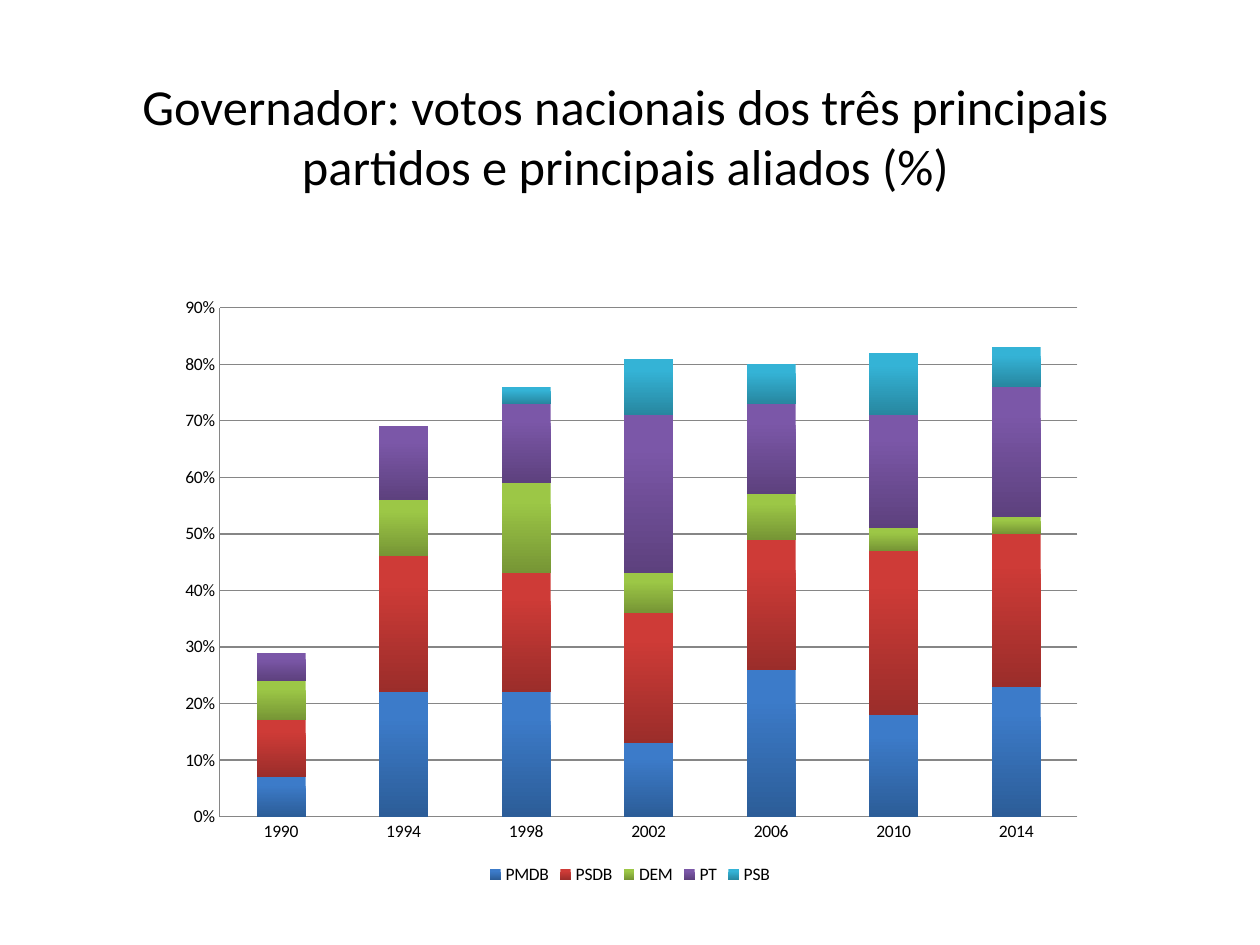
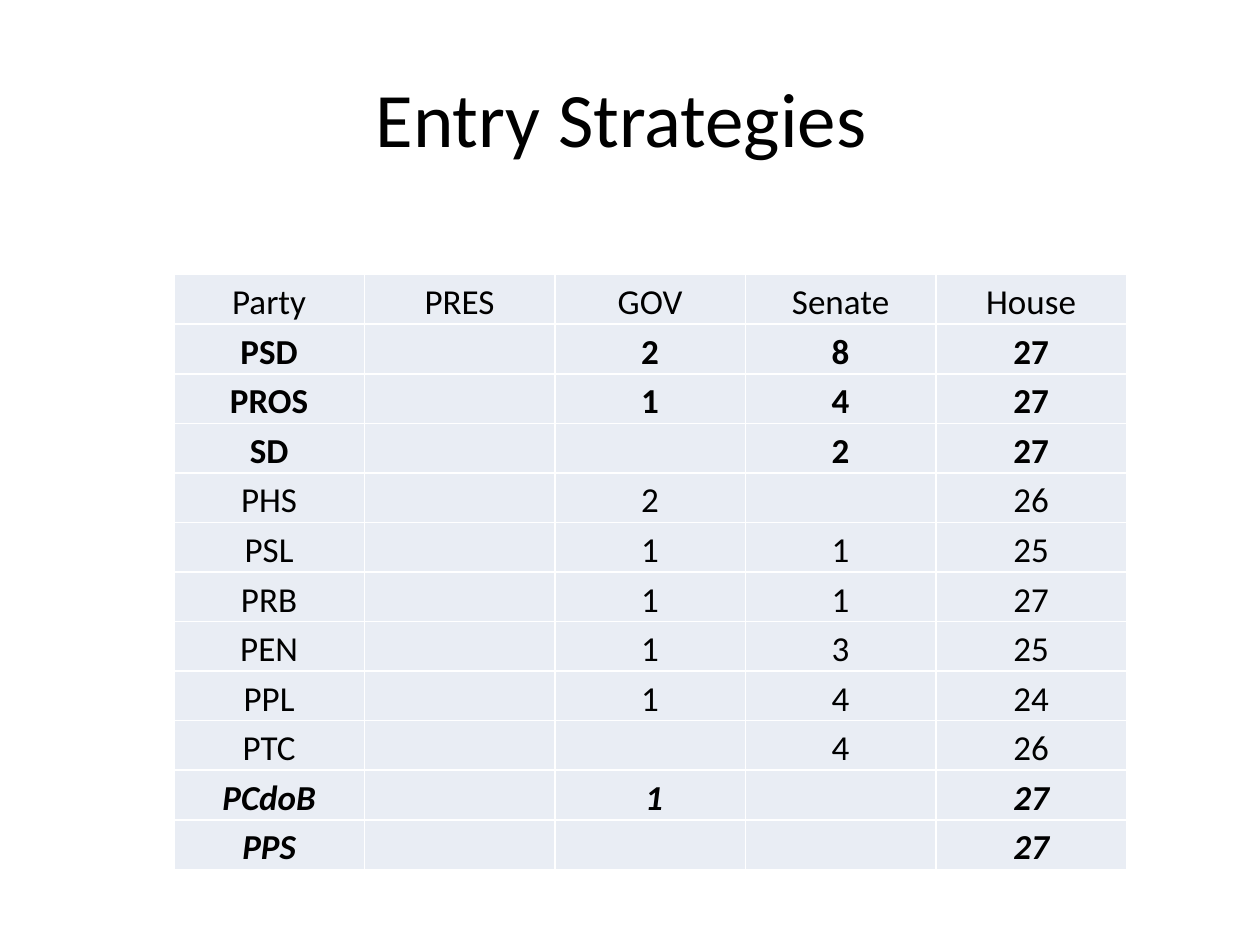
from lxml.etree import SubElement
from pptx import Presentation
from pptx.chart.data import CategoryChartData
from pptx.dml.color import RGBColor
from pptx.enum.chart import XL_CHART_TYPE as CHART, XL_LEGEND_POSITION as LEGEND, XL_TICK_MARK as TICK
from pptx.enum.text import MSO_ANCHOR as ANCHOR, MSO_AUTO_SIZE as AUTOSIZE, PP_ALIGN as ALIGN
from pptx.oxml import parse_xml
from pptx.oxml.ns import nsdecls, qn
from pptx.util import Inches, Pt

FONT, INK, GRID, CELL, RULE = "Calibri", "000000", "868686", "E9EDF4", "FFFFFF"
YEARS = ["1990", "1994", "1998", "2002", "2006", "2010", "2014"]
PARTIES = [
    ("PMDB", "3C7BC9", "2C5D98", [0.07, 0.22, 0.22, 0.13, 0.26, 0.18, 0.23]),
    ("PSDB", "CE3B37", "9B2D2A", [0.1, 0.24, 0.21, 0.23, 0.23, 0.29, 0.27]),
    ("DEM", "9CC746", "769535", [0.07, 0.1, 0.16, 0.07, 0.08, 0.04, 0.03]),
    ("PT", "7B57A8", "5D417E", [0.05, 0.13, 0.14, 0.28, 0.16, 0.2, 0.23]),
    ("PSB", "34B3D6", "2787A0", [0, 0, 0.03, 0.1, 0.07, 0.11, 0.07]),
]
PLAIN, BOLD, BOLD_ITALIC = {}, {"bold": True}, {"bold": True, "italic": True}
ENTRIES = [
    (PLAIN, ["Party", "PRES", "GOV", "Senate", "House"]),
    (BOLD, ["PSD", "", "2", "8", "27"]),
    (BOLD, ["PROS", "", "1", "4", "27"]),
    (BOLD, ["SD", "", "", "2", "27"]),
    (PLAIN, ["PHS", "", "2", "", "26"]),
    (PLAIN, ["PSL", "", "1", "1", "25"]),
    (PLAIN, ["PRB", "", "1", "1", "27"]),
    (PLAIN, ["PEN", "", "1", "3", "25"]),
    (PLAIN, ["PPL", "", "1", "4", "24"]),
    (PLAIN, ["PTC", "", "", "4", "26"]),
    (BOLD_ITALIC, ["PCdoB", "", " 1", "", "27"]),
    (BOLD_ITALIC, ["PPS", "", "", "", "27"]),
]


def color(value):
    """Turn a hex string into a colour."""
    return RGBColor.from_string(value)


def assign(target, values):
    """Set each attribute named in a dict."""
    for name, value in values.items():
        setattr(target, name, value)


def style_font(font, size, **values):
    """Apply the shared typeface and ink at a size."""
    assign(font, {"name": FONT, "size": Pt(size), **values})
    font.color.rgb = color(INK)


def write(tf, text, size, **values):
    """Write one centred paragraph, with newlines as line breaks."""
    p = tf.paragraphs[0]
    p.text = text
    p.alignment = ALIGN.CENTER
    for r in p.runs:
        style_font(r.font, size, **values)


def add_titled_slide(prs, title, size, box):
    """Add a title-only slide with its title placed in the box."""
    s = prs.slides.add_slide(prs.slide_layouts[5])
    sp = s.shapes.title
    assign(sp, dict(zip(("left", "top", "width", "height"), map(Inches, box))))
    assign(sp.text_frame, {"word_wrap": True, "auto_size": AUTOSIZE.NONE,
                           "vertical_anchor": ANCHOR.MIDDLE})
    write(sp.text_frame, title, size)
    return s


def place_plot(chart, **fractions):
    """Fix the inner plot area as fractions of the chart."""
    area = chart.element.xpath("c:chart/c:plotArea")[0]
    for old in area.findall(qn("c:layout")):
        area.remove(old)
    layout = parse_xml(f"<c:layout {nsdecls('c')}/>")
    manual = SubElement(layout, qn("c:manualLayout"))
    settings = {"layoutTarget": "inner", "xMode": "edge", "yMode": "edge", **fractions}
    for name, value in settings.items():
        SubElement(manual, qn(f"c:{name}")).set("val", str(value))
    area.insert(0, layout)


def add_vote_chart(s, box):
    """Draw the stacked vote shares by year in the box."""
    data = CategoryChartData(number_format="0%")
    data.categories = YEARS
    for name, _, _, shares in PARTIES:
        data.add_series(name, shares)
    chart = s.shapes.add_chart(CHART.COLUMN_STACKED, *map(Inches, box), data).chart
    style_font(chart.font, 10)
    assign(chart, {"has_title": False, "has_legend": True})
    assign(chart.legend, {"position": LEGEND.BOTTOM, "include_in_layout": False})
    plot = chart.plots[0]
    assign(plot, {"gap_width": 150, "overlap": 100, "vary_by_categories": False})
    for series, (_, light, dark, _) in zip(plot.series, PARTIES):
        fill = series.format.fill
        fill.gradient()
        fill.gradient_angle = 270
        for stop, shade, position in zip(fill.gradient_stops, (light, dark), (0.2, 1)):
            stop.color.rgb = color(shade)
            stop.position = position
    shares_axis = chart.value_axis
    assign(shares_axis, {"minimum_scale": 0, "maximum_scale": 0.9, "major_unit": 0.1,
                         "has_major_gridlines": True})
    assign(shares_axis.tick_labels, {"number_format": "0%", "number_format_is_linked": False})
    for axis in (shares_axis, chart.category_axis):
        assign(axis, {"major_tick_mark": TICK.NONE, "minor_tick_mark": TICK.NONE})
    for part in (shares_axis, chart.category_axis, shares_axis.major_gridlines):
        part.format.line.color.rgb = color(GRID)
        part.format.line.width = Pt(0.75)
    place_plot(chart, x=0.06, y=0.04, w=0.92, h=0.84)


def add_borders(cell):
    """Rule all four sides of a cell."""
    tc_pr = cell._tc.get_or_add_tcPr()
    for side in ("lnL", "lnR", "lnT", "lnB"):
        line = SubElement(tc_pr, qn(f"a:{side}"), w=str(Pt(1)))
        fill = SubElement(line, qn("a:solidFill"))
        SubElement(fill, qn("a:srgbClr"), val=RULE)


def add_entry_table(s, box):
    """Draw the table of party entries in the box."""
    left, top, width, height = map(Inches, box)
    rows, cols = len(ENTRIES), len(ENTRIES[0][1])
    table = s.shapes.add_table(rows, cols, left, top, width, height).table
    for column in table.columns:
        column.width = width // cols
    for row, (style, texts) in zip(table.rows, ENTRIES):
        row.height = height // rows
        for cell, text in zip(row.cells, texts):
            assign(cell, {"margin_left": Inches(0.01), "margin_right": Inches(0.01),
                          "margin_top": Inches(0.01), "margin_bottom": 0,
                          "vertical_anchor": ANCHOR.BOTTOM})
            add_borders(cell)
            cell.fill.solid()
            cell.fill.fore_color.rgb = color(CELL)
            write(cell.text_frame, text, 20, **{"bold": False, **style})


def main():
    """Build and save both slides."""
    prs = Presentation()
    assign(prs, {"slide_width": Inches(10), "slide_height": Inches(7.5)})
    votes = "Governador: votos nacionais dos três principais\npartidos e principais aliados (%)"
    s = add_titled_slide(prs, votes, 28.8, (0.28, 0.68, 9.37, 0.79))
    add_vote_chart(s, (1.3, 2.25, 7.4, 4.81))
    s = add_titled_slide(prs, "Entry Strategies ", 44, (0.5, 0.3, 9, 1.25))
    add_entry_table(s, (1.38, 2.18, 7.56, 4.72))
    prs.save("out.pptx")


if __name__ == "__main__":
    main()
